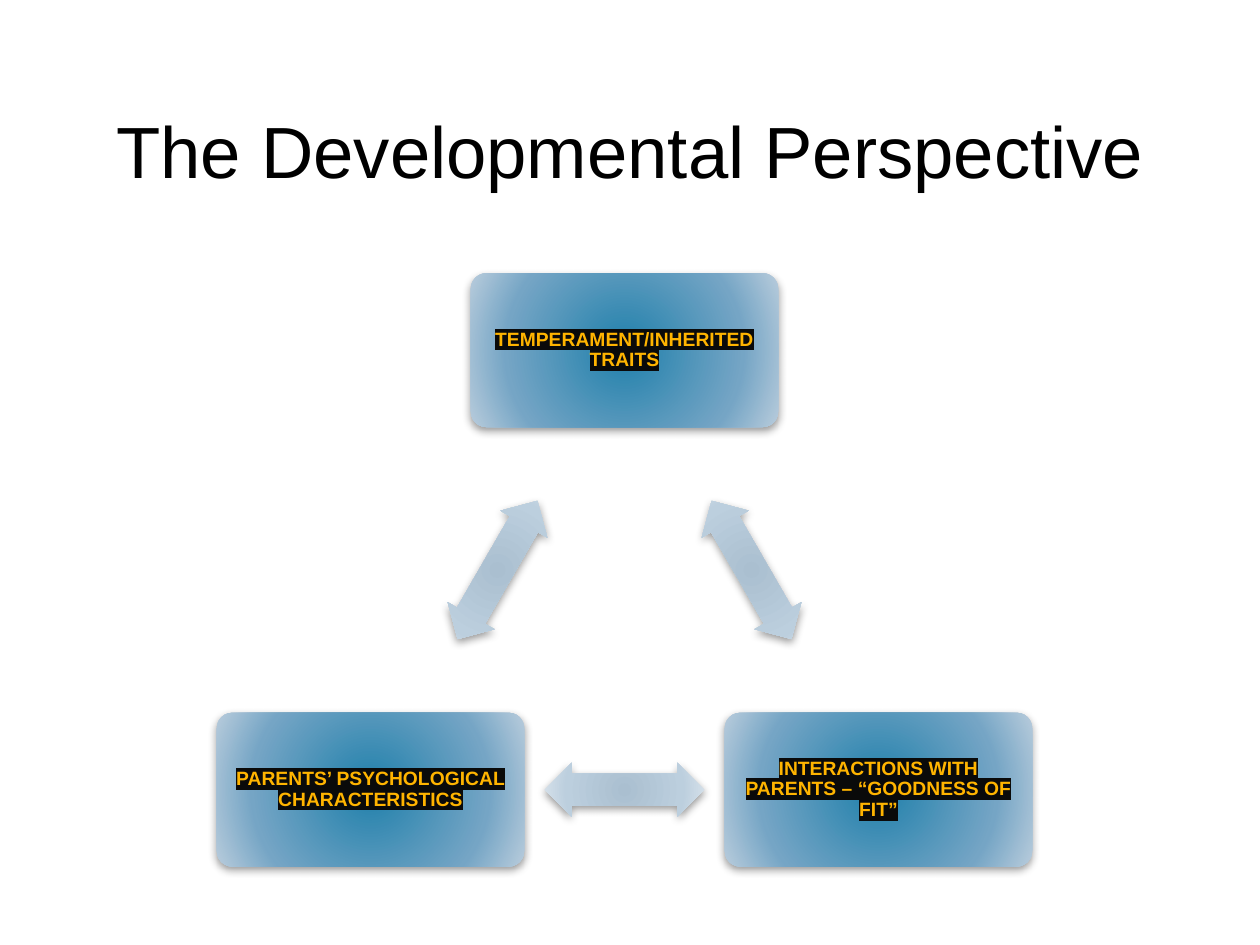
from math import atan2, degrees

from lxml.etree import SubElement
from pptx import Presentation
from pptx.dml.color import RGBColor
from pptx.enum.shapes import MSO_SHAPE as Shape
from pptx.enum.text import MSO_ANCHOR as Anchor, PP_ALIGN as Align
from pptx.oxml.ns import qn
from pptx.util import Cm, Pt

FONT = "Arial"
BLACK = RGBColor(0x00, 0x00, 0x00)
HIGHLIGHT = RGBColor(0x0A, 0x0A, 0x0A)
OUTLINE = RGBColor(0xBD, 0x85, 0x00)
DARK_GOLD = RGBColor(0x7F, 0x59, 0x00)
GOLD = RGBColor(0xFF, 0xB4, 0x00)
MID_GOLD = RGBColor(0xEE, 0xA8, 0x00)

# Gradient stops: percent and colour
NODE_STOPS = [(0, RGBColor(0x20, 0x80, 0xAB)), (69, RGBColor(0x75, 0xA5, 0xC5)),
              (100, RGBColor(0xB8, 0xCC, 0xDC))]
ARROW_STOPS = [(0, RGBColor(0xAA, 0xBF, 0xD0)), (69, RGBColor(0xBC, 0xCF, 0xDE)),
               (100, RGBColor(0xD8, 0xE2, 0xEB))]
LABEL_STOPS = [(0, DARK_GOLD), (43, GOLD), (48, MID_GOLD), (100, DARK_GOLD)]

# Lengths in centimetres
NODE_W, NODE_H = 6.2, 3.1
ARROW_W, ARROW_H = 3.22, 1.09
LABEL_GAP = 0.09
LABEL_INSET = 0.12

FACTORS = ["TEMPERAMENT/INHERITED TRAITS",
           "INTERACTIONS WITH PARENTS – “GOODNESS OF FIT”",
           "PARENTS’ PSYCHOLOGICAL CHARACTERISTICS"]


def add_xml(parent, tag, **attributes):
    return SubElement(parent, qn(tag), {k: str(v) for k, v in attributes.items()})


def add_gradient(parent, stops):
    gradient = add_xml(parent, "a:gradFill", rotWithShape=1)
    stop_list = add_xml(gradient, "a:gsLst")
    for percent, color in stops:
        stop = add_xml(stop_list, "a:gs", pos=percent * 1000)
        add_xml(stop, "a:srgbClr", val=color)
    return gradient


def add_glossy_shape(group, kind, center, size, stops, adjustments):
    """Shape with a radial gradient and a soft shadow, placed by its centre."""
    (x, y), (w, h) = center, size
    shape = group.shapes.add_shape(kind, Cm(x - w / 2), Cm(y - h / 2), Cm(w), Cm(h))
    for i, value in enumerate(adjustments):
        shape.adjustments[i] = value
    properties = shape._element.spPr
    radial = add_xml(add_gradient(properties, stops), "a:path", path="circle")
    add_xml(radial, "a:fillToRect", l=100000, t=100000, r=100000, b=100000)
    shape.line.fill.background()
    effects = add_xml(properties, "a:effectLst")
    shadow = add_xml(effects, "a:outerShdw", blurRad=Pt(5), dist=Pt(2),
                     dir=90 * 60000, rotWithShape=0)
    shade = add_xml(shadow, "a:srgbClr", val=BLACK)
    add_xml(shade, "a:alpha", val=40000)
    return shape


def style_label(run):
    """Gold gradient letters with an outline on a dark highlight."""
    run.font.size, run.font.bold = Pt(11), True
    properties = run._r.get_or_add_rPr()
    outline = add_xml(properties, "a:ln", w=Pt(0.71))
    add_xml(add_xml(outline, "a:solidFill"), "a:srgbClr", val=OUTLINE)
    gradient = add_gradient(properties, LABEL_STOPS)
    add_xml(gradient, "a:lin", ang=90 * 60000)
    add_xml(add_xml(properties, "a:highlight"), "a:srgbClr", val=HIGHLIGHT)
    run.font.name = FONT


def add_factor(group, center, wording):
    """Rounded node with its label."""
    add_glossy_shape(group, Shape.ROUNDED_RECTANGLE, center,
                     (NODE_W, NODE_H), NODE_STOPS, [0.1])
    x, y = center
    w, h = NODE_W - 2 * LABEL_GAP, NODE_H - 2 * LABEL_GAP
    label = group.shapes.add_textbox(Cm(x - w / 2), Cm(y - h / 2), Cm(w), Cm(h))
    frame = label.text_frame
    frame.word_wrap = True
    frame.vertical_anchor = Anchor.MIDDLE
    frame.margin_left = frame.margin_right = Cm(LABEL_INSET)
    frame.margin_top = frame.margin_bottom = Cm(LABEL_INSET)
    paragraph = frame.paragraphs[0]
    paragraph.alignment = Align.CENTER
    paragraph.line_spacing = 0.9
    after = add_xml(paragraph._p.get_or_add_pPr(), "a:spcAft")
    add_xml(after, "a:spcPct", val=35000)
    run = paragraph.add_run()
    run.text = wording
    style_label(run)


def add_link(group, start, end):
    """Double arrow halfway between two nodes, turned along their line."""
    (x1, y1), (x2, y2) = start, end
    arrow = add_glossy_shape(group, Shape.LEFT_RIGHT_ARROW,
                             ((x1 + x2) / 2, (y1 + y2) / 2),
                             (ARROW_W, ARROW_H), ARROW_STOPS, [0.6, 0.5])
    arrow.rotation = round(degrees(atan2(y2 - y1, x2 - x1))) % 360


def add_cycle(slide, left, top, width, height):
    """Triangle of factors, clockwise from the top."""
    group = slide.shapes.add_group_shape()
    bottom_y = top + height - NODE_H / 2
    centers = [(left + width / 2, top + NODE_H / 2),
               (left + width - NODE_W / 2, bottom_y),
               (left + NODE_W / 2, bottom_y)]
    for i, wording in enumerate(FACTORS):
        add_factor(group, centers[i], wording)
        add_link(group, centers[i], centers[(i + 1) % len(centers)])


def add_title(slide, left, top, width, height):
    title = slide.shapes.add_textbox(Cm(left), Cm(top), Cm(width), Cm(height))
    frame = title.text_frame
    frame.word_wrap = True
    frame.vertical_anchor = Anchor.BOTTOM
    paragraph = frame.paragraphs[0]
    paragraph.alignment = Align.CENTER
    run = paragraph.add_run()
    run.text = "The Developmental Perspective"
    run.font.name, run.font.size = FONT, Pt(41.4)
    run.font.color.rgb = BLACK


def main():
    deck = Presentation()
    deck.slide_width, deck.slide_height = Cm(25.4), Cm(19.05)
    slide = deck.slides.add_slide(deck.slide_layouts[6])
    add_title(slide, 1.52, 0.3, 22.35, 3.71)
    add_cycle(slide, 4.37, 5.51, 16.44, 11.96)
    deck.save("out.pptx")


if __name__ == "__main__":
    main()
